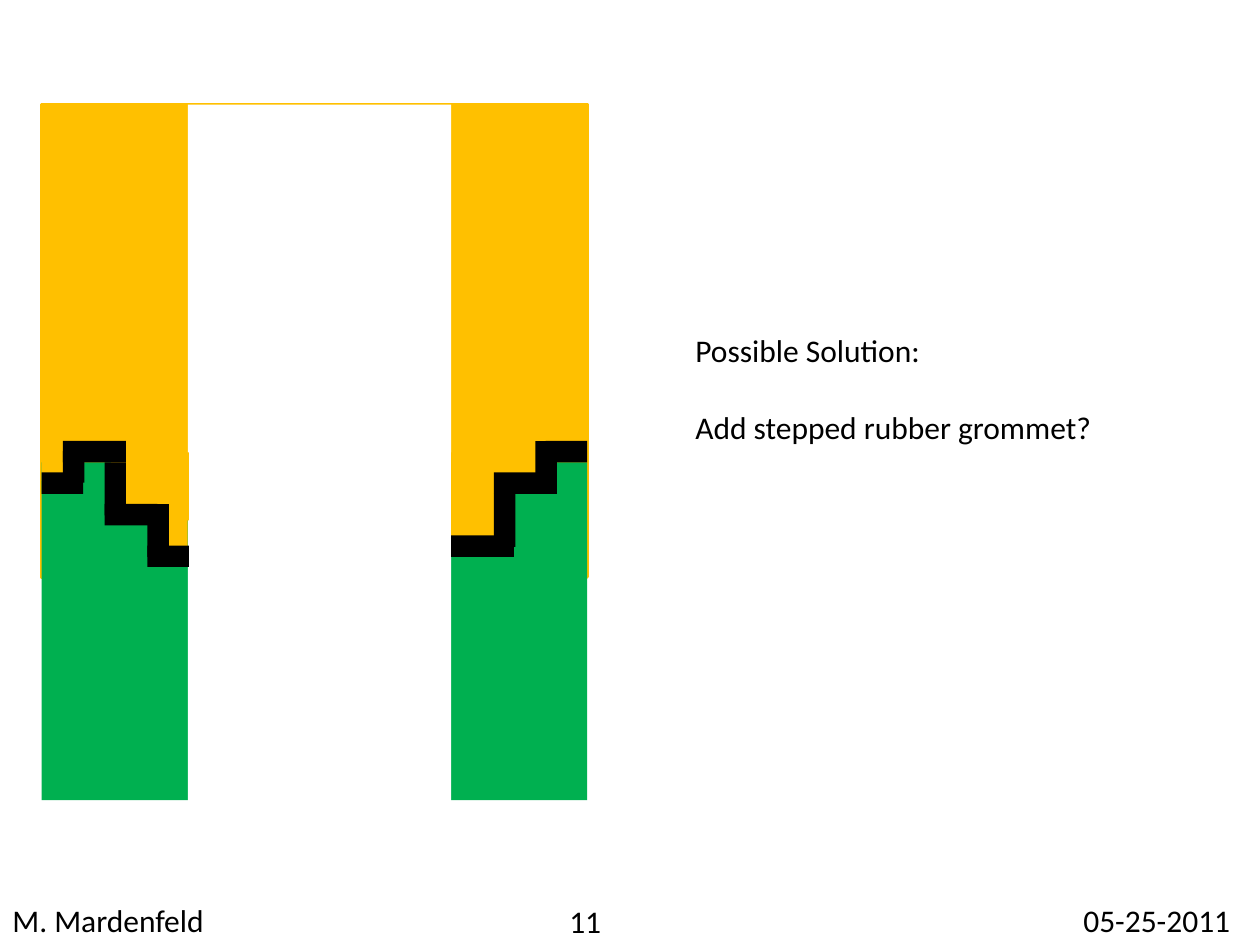
from dataclasses import dataclass

from pptx import Presentation
from pptx.dml.color import RGBColor
from pptx.enum.shapes import MSO_SHAPE
from pptx.util import Inches, Pt

RECTANGLE = MSO_SHAPE.RECTANGLE
COLORS = {
    "housing": "FFC000",
    "base": "00B050",
    "opening": "FFFFFF",
    "grommet": "000000",
    "text": "000000",
}
FONT = "Calibri"
FONT_SIZE = Pt(18)
LINE_GAP = Pt(22)
BAND = 0.17


@dataclass
class Block:
    left: float
    top: float
    width: float
    height: float
    color: str
    outline: float = 0


@dataclass
class Label:
    left: float
    top: float
    width: float
    height: float
    lines: tuple[str, ...]
    wrap: bool = True


def across(left: float, top: float, length: float) -> Block:
    return Block(left, top, length, BAND, "grommet")


def down(left: float, top: float, length: float) -> Block:
    return Block(left, top, BAND, length, "grommet")


BODY = [
    Block(0.33, 0.83, 4.33, 3.75, "housing", 2),
    Block(0.33, 3.67, 4.33, 2.68, "base"),
    Block(1.49, 0.83, 2.09, 5.67, "opening"),
]
NOTCHES = [
    Block(0.88, 3.59, 0.62, 0.54, "housing"),
    Block(1.18, 3.97, 0.31, 0.46, "housing"),
    Block(0.33, 3.51, 0.31, 0.31, "housing"),
    Block(3.58, 3.59, 0.77, 0.31, "housing"),
    Block(3.58, 3.82, 0.46, 0.54, "housing"),
]
RIGHT_GROMMET = [
    across(4.33, 3.5, 0.33),
    across(3.92, 3.75, 0.42),
    down(4.25, 3.5, 0.42),
    down(3.92, 3.92, 0.42),
    across(3.58, 4.25, 0.5),
]
LEFT_GROMMET = [
    across(1.17, 4.33, 0.33),
    across(0.83, 4, 0.42),
    down(1.17, 4, 0.42),
    down(0.83, 3.67, 0.42),
    across(0.5, 3.5, 0.5),
    down(0.5, 3.58, 0.25),
    across(0.33, 3.75, 0.33),
]
LABELS = [
    Label(0, 7.1, 2.5, 0.4, ("M. Mardenfeld",)),
    Label(8.5, 7.1, 1.5, 0.4, ("05-25-2011",)),
    Label(4.42, 7.11, 2.07, 0.39, ("11",)),
    Label(5.42, 2.58, 3.38, 1.01,
          ("Possible Solution:", "Add stepped rubber grommet?"), False),
]


def rgb(name: str) -> RGBColor:
    return RGBColor.from_string(COLORS[name])


def draw_block(shapes, block: Block) -> None:
    sp = shapes.add_shape(RECTANGLE, Inches(block.left), Inches(block.top),
                          Inches(block.width), Inches(block.height))
    sp.shadow.inherit = False
    sp.fill.solid()
    sp.fill.fore_color.rgb = rgb(block.color)
    if block.outline:
        sp.line.color.rgb = rgb(block.color)
        sp.line.width = Pt(block.outline)
    else:
        sp.line.fill.background()


def draw_label(shapes, label: Label) -> None:
    sp = shapes.add_textbox(Inches(label.left), Inches(label.top),
                            Inches(label.width), Inches(label.height))
    tf = sp.text_frame
    tf.word_wrap = label.wrap
    for i, line in enumerate(label.lines):
        p = tf.add_paragraph() if i else tf.paragraphs[0]
        if i:
            p.space_before = LINE_GAP
        r = p.add_run()
        r.text = line
        r.font.name = FONT
        r.font.size = FONT_SIZE
        r.font.color.rgb = rgb("text")


def main() -> None:
    prs = Presentation()
    prs.slide_width = Inches(10)
    prs.slide_height = Inches(7.5)
    s = prs.slides.add_slide(prs.slide_layouts[6])
    section = s.shapes.add_group_shape()
    for block in BODY + NOTCHES + RIGHT_GROMMET + LEFT_GROMMET:
        draw_block(section.shapes, block)
    for label in LABELS:
        draw_label(s.shapes, label)
    prs.save("out.pptx")


if __name__ == "__main__":
    main()
